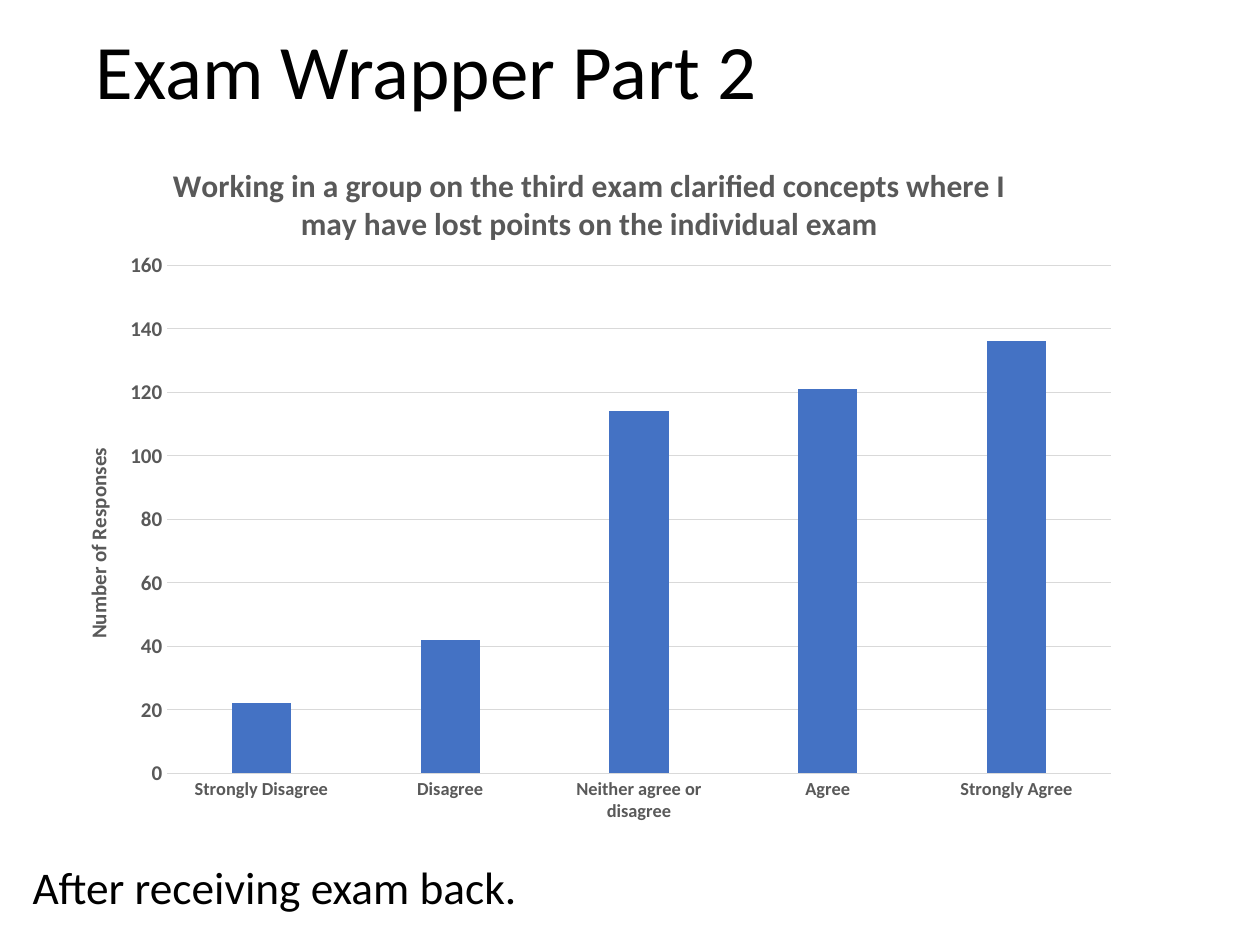
from lxml import etree
from pptx import Presentation
from pptx.chart.data import CategoryChartData
from pptx.dml.color import RGBColor
from pptx.enum import chart as c, text as t
from pptx.oxml.ns import qn
from pptx.util import Inches, Pt

FONT = "Calibri"
COLORS = {"text": "000000", "label": "595959", "line": "D9D9D9", "bar": "4472C4"}
TEXTS = [
    ("Exam Wrapper Part 2", (0.66, 0.2, 8.62, 0.78), 44, 0.9, t.MSO_ANCHOR.MIDDLE),
    ("After receiving exam back.", (0.16, 6.85, 8.62, 0.48), 25.9, 0.8, t.MSO_ANCHOR.TOP),
]
CHART_BOX = (0.38, 0.97, 8.61, 5.68)
CHART_TITLE = ("Working in a group on the third exam clarified concepts "
               "where I may have lost points on the individual exam")
AXIS_TITLE = "Number of Responses"
RESPONSES = {
    "Strongly Disagree": 22,
    "Disagree": 42,
    "Neither agree or disagree": 114,
    "Agree": 121,
    "Strongly Agree": 136,
}


def color(name):
    return RGBColor.from_string(COLORS[name])


def style(font, size, name, bold=False):
    font.name, font.size, font.bold = FONT, Pt(size), bold
    font.color.rgb = color(name)


def add_text(slide, words, box, size, spacing, anchor):
    frame = slide.shapes.add_textbox(*map(Inches, box)).text_frame
    frame.word_wrap = True
    frame.vertical_anchor = anchor
    frame.text = words
    paragraph = frame.paragraphs[0]
    paragraph.line_spacing = spacing
    style(paragraph.runs[0].font, size, "text")


def set_title(title, words, size):
    title.text_frame.text = words
    style(title.text_frame.paragraphs[0].runs[0].font, size, "label", True)


def place(element, **fractions):
    for old in element.findall(qn("c:layout")):
        element.remove(old)
    layout = etree.Element(qn("c:layout"))
    manual = etree.SubElement(layout, qn("c:manualLayout"))
    if "w" in fractions:
        etree.SubElement(manual, qn("c:layoutTarget")).set("val", "inner")
    for side in ("xMode", "yMode"):
        etree.SubElement(manual, qn("c:" + side)).set("val", "edge")
    for key, value in fractions.items():
        etree.SubElement(manual, qn("c:" + key)).set("val", str(value))
    text = element.find(qn("c:tx"))
    element.insert(0 if text is None else 1, layout)


def add_responses(slide):
    data = CategoryChartData()
    data.categories = list(RESPONSES)
    data.add_series("Series 1", list(RESPONSES.values()))
    chart = slide.shapes.add_chart(
        c.XL_CHART_TYPE.COLUMN_CLUSTERED, *map(Inches, CHART_BOX), data).chart
    style(chart.font, 10, "text")
    chart.has_legend = False
    set_title(chart.chart_title, CHART_TITLE, 18)
    chart.chart_title.include_in_layout = False

    plot = chart.plots[0]
    plot.gap_width, plot.overlap, plot.vary_by_categories = 219, -27, False
    fill = plot.series[0].format.fill
    fill.solid()
    fill.fore_color.rgb = color("bar")

    categories, values = chart.category_axis, chart.value_axis
    for axis, size in ((categories, 10.5), (values, 12)):
        axis.major_tick_mark = axis.minor_tick_mark = c.XL_TICK_MARK.NONE
        style(axis.tick_labels.font, size, "label", True)
    values.minimum_scale, values.maximum_scale, values.major_unit = 0, 160, 20
    values.format.line.fill.background()
    for line in (categories.format.line, values.major_gridlines.format.line):
        line.color.rgb = color("line")
        line.width = Pt(0.75)
    set_title(values.axis_title, AXIS_TITLE, 12)

    place(chart.chart_title._element, x=0.11, y=0.05)
    place(values.axis_title._element, x=0.03, y=0.45)
    place(plot._element.getparent(), x=0.11, y=0.2, w=0.87, h=0.71)


def main():
    presentation = Presentation()
    presentation.slide_width, presentation.slide_height = Inches(10), Inches(7.5)
    slide = presentation.slides.add_slide(presentation.slide_layouts[6])
    for item in TEXTS:
        add_text(slide, *item)
    add_responses(slide)
    presentation.save("out.pptx")


if __name__ == "__main__":
    main()
